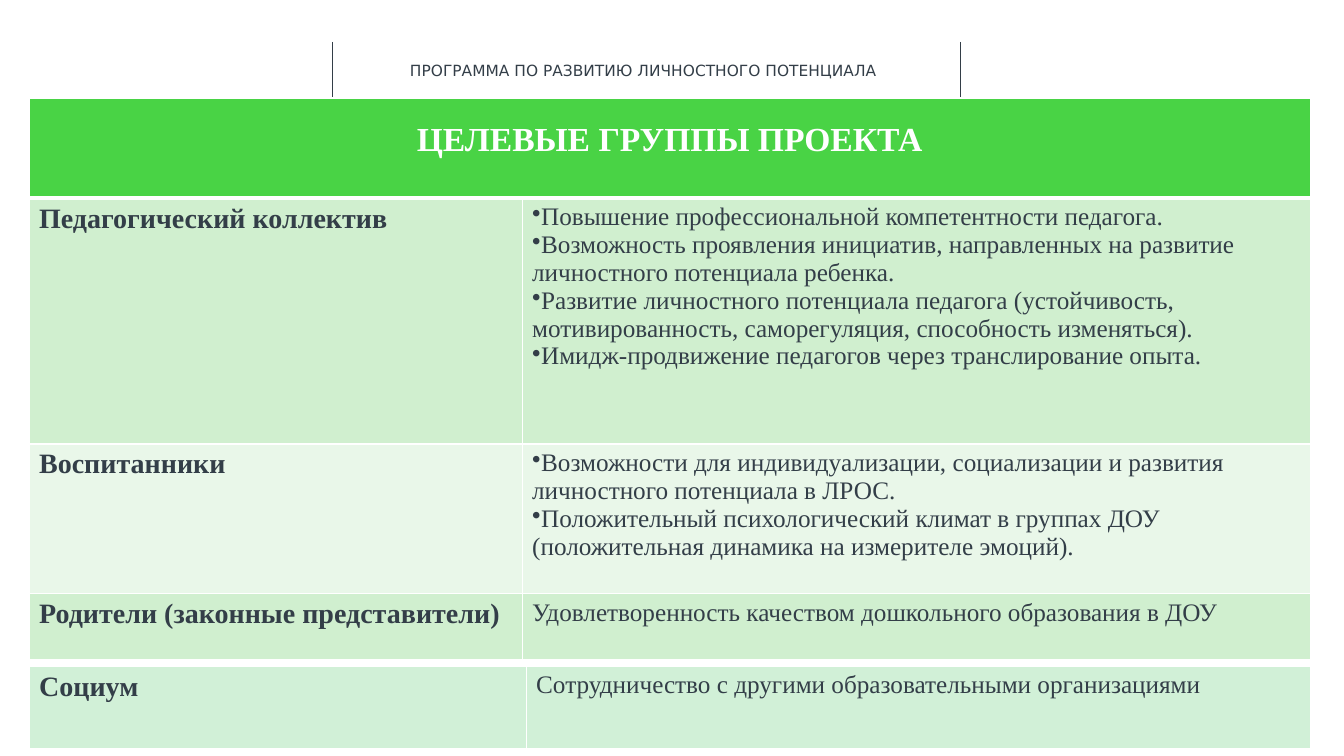
from lxml import etree
from pptx import Presentation
from pptx import util as u
from pptx.dml.color import RGBColor
from pptx.enum import shapes, text
from pptx.oxml.ns import qn

DARK = RGBColor(0x33, 0x3E, 0x48)
WHITE = RGBColor(0xFF, 0xFF, 0xFF)
GREEN = RGBColor(0x49, 0xD3, 0x45)
MID_GREEN = RGBColor(0xD0, 0xEF, 0xCF)
PALE_GREEN = RGBColor(0xE9, 0xF7, 0xE9)
MINT = RGBColor(0xD1, 0xF0, 0xD7)
SERIF = "Times New Roman"
BULLET = "•"

PROGRAMME = "ПРОГРАММА ПО РАЗВИТИЮ ЛИЧНОСТНОГО ПОТЕНЦИАЛА"
HEADING = "ЦЕЛЕВЫЕ ГРУППЫ ПРОЕКТА"
# Group, outcomes (a leading bullet marks a list item), fill, row height in px
GROUPS = [
    ("Педагогический коллектив", [
        "•Повышение профессиональной компетентности педагога.",
        "•Возможность проявления инициатив, направленных на развитие "
        "личностного потенциала ребенка.",
        "•Развитие личностного потенциала педагога (устойчивость, "
        "мотивированность, саморегуляция, способность изменяться).",
        "•Имидж-продвижение педагогов через транслирование опыта.",
    ], MID_GREEN, 246),
    ("Воспитанники", [
        "•Возможности для индивидуализации, социализации и развития "
        "личностного потенциала в ЛРОС.",
        "•Положительный психологический климат в группах ДОУ",
        "(положительная динамика на измерителе эмоций).",
    ], PALE_GREEN, 150),
    ("Родители (законные представители)",
     ["Удовлетворенность качеством дошкольного образования в ДОУ"], MID_GREEN, 66),
]
SOCIETY = [("Социум", ["Сотрудничество с другими образовательными организациями"],
            MINT, 84)]

LEFT, WIDTH = 29, 1281
HEADING_HEIGHT = 100
RULES_X = (332, 960)


def px(n):
    return u.Emu(round(n * 914400 / 100.8))


def write(tf, lines, size, font=SERIF, color=DARK, bold=False, align=None, spacing=None):
    for i, line in enumerate(lines):
        p = tf.paragraphs[0] if i == 0 else tf.add_paragraph()
        if line.startswith(BULLET):
            pPr = p._p.get_or_add_pPr()
            pPr.set("marL", "0")
            pPr.set("indent", "0")
            etree.SubElement(pPr, qn("a:buChar")).set("char", BULLET)
        if align is not None:
            p.alignment = align
        if spacing:
            p.line_spacing = spacing
        r = p.add_run()
        r.text = line.removeprefix(BULLET)
        r.font.name, r.font.size, r.font.bold = font, u.Pt(size), bold
        r.font.color.rgb = color


def style_cell(cell, fill, bottom=1):
    """Give the cell white borders (bottom in points) and a solid fill."""
    tcPr = cell._tc.get_or_add_tcPr()
    for side, width in (("L", 1), ("R", 1), ("T", 1), ("B", bottom)):
        ln = etree.SubElement(tcPr, qn(f"a:ln{side}"), w=str(u.Pt(width)))
        solid = etree.SubElement(ln, qn("a:solidFill"))
        etree.SubElement(solid, qn("a:srgbClr"), val=str(WHITE))
    cell.fill.solid()
    cell.fill.fore_color.rgb = fill


def add_groups(s, top, first_col, groups, heading=None, bottom=1):
    """Add a two-column table of groups, with an optional merged heading row."""
    heights = [HEADING_HEIGHT] * bool(heading) + [g[3] for g in groups]
    frame = s.shapes.add_table(len(heights), 2, px(LEFT), px(top), px(WIDTH), px(sum(heights)))
    table = frame.table
    table.first_row = table.horz_banding = False
    for col, width in zip(table.columns, (first_col, WIDTH - first_col)):
        col.width = px(width)
    for row, height in zip(table.rows, heights):
        row.height = px(height)
    if heading:
        table.cell(0, 0).merge(table.cell(0, 1))
        for cell in table.rows[0].cells:
            style_cell(cell, GREEN, bottom=3)
        write(table.cell(0, 0).text_frame, [heading], 24, color=WHITE, bold=True,
              align=text.PP_ALIGN.CENTER, spacing=1.5)
    for i, (group, outcomes, fill, _) in enumerate(groups, start=bool(heading)):
        name, details = table.rows[i].cells
        for cell in (name, details):
            style_cell(cell, fill, bottom)
        write(name.text_frame, [group], 20, bold=True)
        write(details.text_frame, outcomes, 18)


prs = Presentation()
prs.slide_width, prs.slide_height = u.Inches(13.33), u.Inches(7.5)
s = prs.slides.add_slide(prs.slide_layouts[6])

for x in RULES_X:
    rule = s.shapes.add_connector(shapes.MSO_CONNECTOR.STRAIGHT, px(x), px(42), px(x), px(99))
    rule.line.color.rgb = DARK
    rule.line.width = u.Pt(0.5)
    etree.SubElement(rule._element.spPr, qn("a:effectLst"))

sp = s.shapes.add_textbox(px(400), px(56), px(491), px(29))
sp.text_frame.word_wrap = False
write(sp.text_frame, [PROGRAMME], 11, font="DejaVu Sans")

add_groups(s, 98, 493, GROUPS, heading=HEADING)
add_groups(s, 666, 497, SOCIETY, bottom=3)

prs.save("out.pptx")
